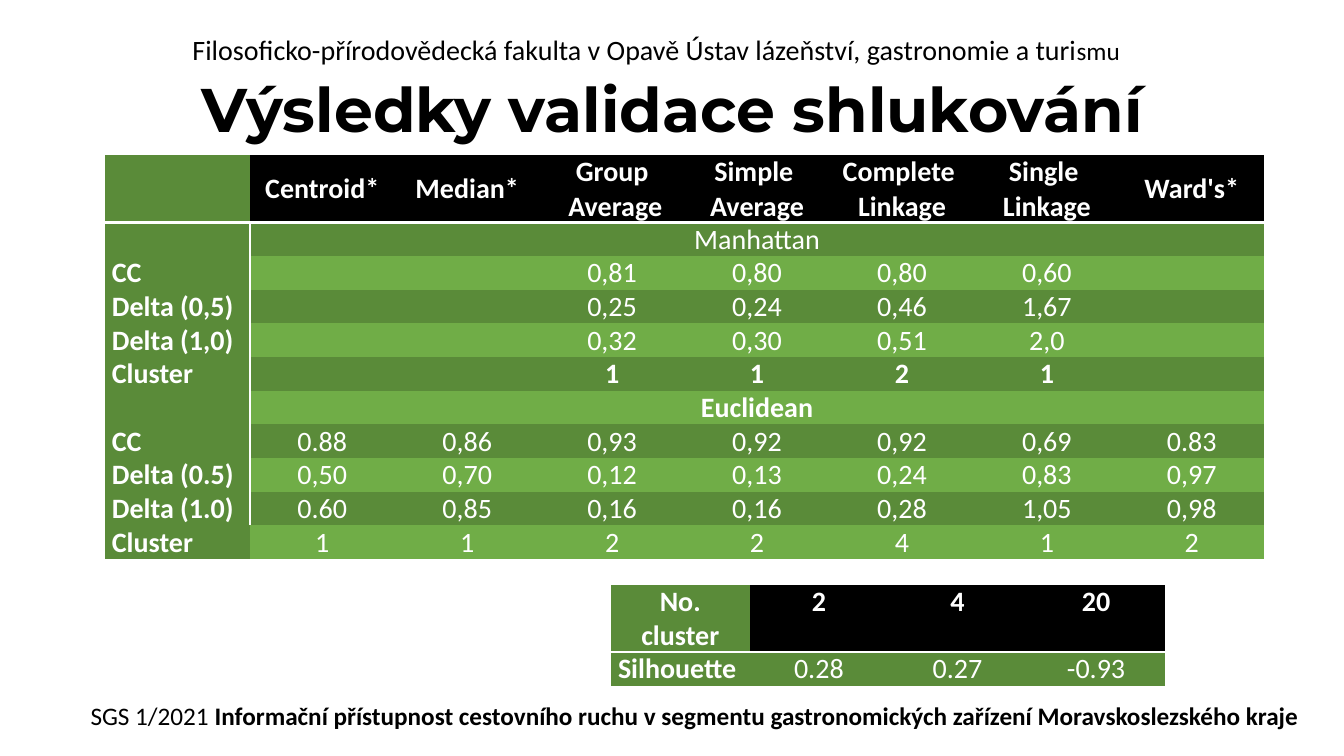
import dataclasses

import pptx
import pptx.dml.color
import pptx.enum.text
import pptx.oxml
import pptx.oxml.ns
import pptx.util

Inches = pptx.util.Inches
ALIGN = pptx.enum.text.PP_ALIGN
ANCHOR = pptx.enum.text.MSO_ANCHOR


@dataclasses.dataclass(frozen=True)
class Theme:
    black: str = "000000"
    white: str = "FFFFFF"
    dark_green: str = "5A8B39"
    light_green: str = "70AD47"
    body_font: str = "Calibri"
    title_font: str = "Montserrat"
    title_size: int = 44
    text_size: int = 20
    small_size: int = 18
    rule_width: int = 2
    plain_table_style: str = "{2D5ABB26-0587-4C30-8999-92F81FD0307C}"


THEME = Theme()
ROW_HEIGHT = 1 / 3

HEADERS = ["", "Centroid*", "Median*", "Group\n Average", "Simple \nAverage",
           "Complete \nLinkage", "Single \nLinkage", "Ward's*"]
VALIDATION_ROWS = [
    ["", "Manhattan"],
    ["CC", "", "", "0,81", "0,80", "0,80", "0,60", ""],
    ["Delta (0,5)", "", "", "0,25", "0,24", "0,46", "1,67", ""],
    ["Delta (1,0)", "", "", "0,32", "0,30", "0,51", "2,0", ""],
    ["Cluster", "", "", "1", "1", "2", "1", ""],
    ["", "Euclidean"],
    ["CC", "0.88", "0,86", "0,93", "0,92", "0,92", "0,69", "0.83"],
    ["Delta (0.5)", "0,50", "0,70", "0,12", "0,13", "0,24", "0,83", "0,97"],
    ["Delta (1.0)", "0.60", "0,85", "0,16", "0,16", "0,28", "1,05", "0,98"],
    ["Cluster", "1", "1", "2", "2", "4", "1", "2"],
]
BOLD_VALUE_ROWS = {5, 6}
SILHOUETTE_ROWS = [["No. cluster", "2", "4", "20"],
                   ["Silhouette", "0.28", "0.27", "-0.93"]]


def add_run(paragraph, text, size, color, bold=False, font=THEME.body_font):
    run = paragraph.add_run()
    run.text = text
    run.font.size = pptx.util.Pt(size)
    run.font.name = font
    run.font.bold = bold
    run.font.color.rgb = pptx.dml.color.RGBColor.from_string(color)


def add_text_line(slide, box, runs, wrap=True):
    """Place one line of text; runs are (text, size, bold)."""
    shape = slide.shapes.add_textbox(*map(Inches, box))
    shape.text_frame.word_wrap = wrap
    for text, size, bold in runs:
        add_run(shape.text_frame.paragraphs[0], text, size, THEME.black, bold)


def add_title(slide, box, text):
    title = slide.shapes.title
    title.left, title.top, title.width, title.height = map(Inches, box)
    title.text_frame.vertical_anchor = ANCHOR.MIDDLE
    paragraph = title.text_frame.paragraphs[0]
    paragraph.alignment = ALIGN.CENTER
    paragraph.line_spacing = 0.9
    add_run(paragraph, text, THEME.title_size, THEME.black, True, THEME.title_font)


def add_plain_table(slide, box, row_count, column_count):
    """Add an unstyled grid with a double-height header row."""
    frame = slide.shapes.add_table(row_count, column_count, *map(Inches, box))
    frame.element.xpath(".//a:tableStyleId")[0].text = THEME.plain_table_style
    table = frame.table
    for column in table.columns:
        column.width = Inches(box[2] / column_count)
    for index, row in enumerate(table.rows):
        row.height = Inches(ROW_HEIGHT * (2 if index == 0 else 1))
    return table


def fill_cell(cell, text, fill, bold, align=ALIGN.CENTER, anchor=ANCHOR.MIDDLE):
    cell.fill.solid()
    cell.fill.fore_color.rgb = pptx.dml.color.RGBColor.from_string(fill)
    cell.margin_left = cell.margin_right = Inches(0.07)
    cell.margin_top = cell.margin_bottom = 0
    cell.vertical_anchor = anchor
    if not text:
        return
    for index, line in enumerate(text.split("\n")):
        frame = cell.text_frame
        paragraph = frame.add_paragraph() if index else frame.paragraphs[0]
        paragraph.alignment = align
        add_run(paragraph, line, THEME.text_size, THEME.white, bold)


def add_border(cell, side):
    """Draw a white rule on one side: lnR or lnB."""
    width = pptx.util.Pt(THEME.rule_width)
    line = pptx.oxml.parse_xml(
        f'<a:{side} {pptx.oxml.ns.nsdecls("a")} w="{width}"><a:solidFill>'
        f'<a:srgbClr val="{THEME.white}"/></a:solidFill></a:{side}>')
    cell.fill.solid
    cell.text_frame
    cell_properties = cell.text_frame._txBody.getparent().get_or_add_tcPr()
    cell_properties.insert(0, line)


def add_header_row(table, headers, anchor):
    for column, text in enumerate(headers):
        cell = table.cell(0, column)
        fill = THEME.black if column else THEME.dark_green
        fill_cell(cell, text, fill, True, anchor=anchor)
        add_border(cell, "lnB")


def add_validation_table(slide, box):
    table = add_plain_table(slide, box, len(VALIDATION_ROWS) + 1, len(HEADERS))
    add_header_row(table, HEADERS, ANCHOR.MIDDLE)
    for row, (label, *values) in enumerate(VALIDATION_ROWS, start=1):
        label_cell = table.cell(row, 0)
        fill_cell(label_cell, label, THEME.dark_green, True, ALIGN.LEFT)
        if row < len(VALIDATION_ROWS):
            add_border(label_cell, "lnR")
        if len(values) == 1:
            table.cell(row, 1).merge(table.cell(row, len(HEADERS) - 1))
        band = THEME.dark_green if row % 2 else THEME.light_green
        for column, value in enumerate(values, start=1):
            fill_cell(table.cell(row, column), value, band, row in BOLD_VALUE_ROWS)


def add_silhouette_table(slide, box):
    headers, values = SILHOUETTE_ROWS
    table = add_plain_table(slide, box, len(SILHOUETTE_ROWS), len(headers))
    add_header_row(table, headers, ANCHOR.TOP)
    for column, value in enumerate(values):
        align = ALIGN.CENTER if column else ALIGN.LEFT
        fill_cell(table.cell(1, column), value, THEME.dark_green, column == 0, align)


def build_slide(presentation):
    slide = presentation.slides.add_slide(presentation.slide_layouts[5])
    # Heading
    add_title(slide, (0.92, 0.59, 11.5, 1.05), "Výsledky validace shlukování")
    add_text_line(slide, (1.81, 0.27, 9.59, 0.44), [
        ("Filosoficko-přírodovědecká fakulta v Opavě Ústav lázeňství, "
         "gastronomie a turi", THEME.text_size, False),
        ("smu", THEME.small_size, False)])
    # Tables
    add_validation_table(slide, (1.04, 1.54, 11.5, 4))
    add_silhouette_table(slide, (6.06, 5.8, 5.5, 1))
    # Footer
    add_text_line(slide, (0.8, 6.9, 12.33, 0.4), [
        ("SGS 1/2021 ", THEME.small_size, False),
        ("Informační přístupnost cestovního ruchu v segmentu gastronomických "
         "zařízení Moravskoslezského kraje", THEME.small_size, True)], wrap=False)


def main():
    presentation = pptx.Presentation()
    presentation.slide_width = Inches(13.33)
    presentation.slide_height = Inches(7.5)
    build_slide(presentation)
    presentation.save("out.pptx")


if __name__ == "__main__":
    main()
